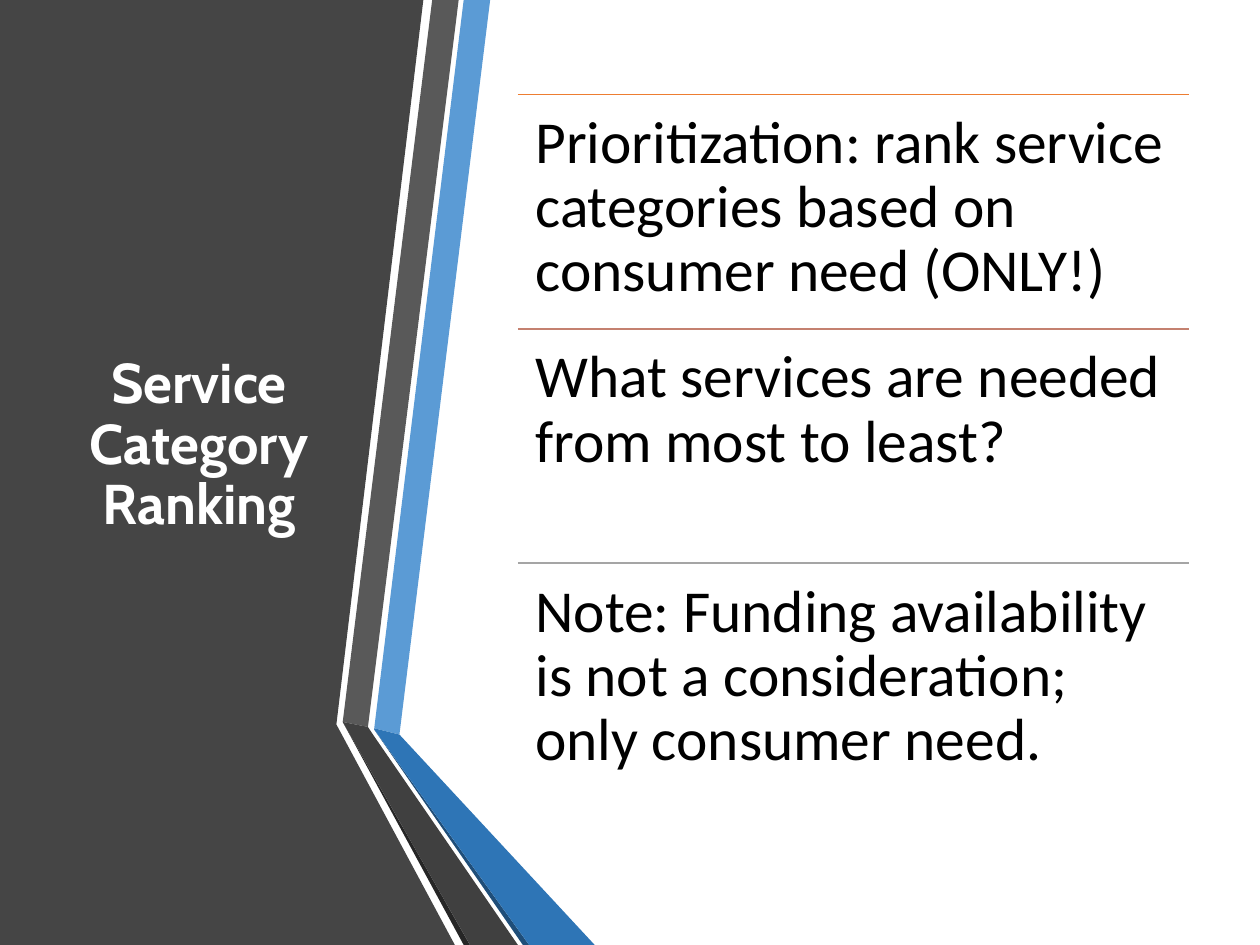
from lxml import etree
from pptx import Presentation
from pptx.dml.color import RGBColor
from pptx.enum import shapes, text
from pptx.oxml import ns
from pptx.util import Inches, Pt

WHITE = RGBColor(0xFF, 0xFF, 0xFF)
BLACK = RGBColor(0x00, 0x00, 0x00)
PANEL = RGBColor(0x45, 0x45, 0x45)
GRAY = RGBColor(0x59, 0x59, 0x59)
GRAY_DARK = RGBColor(0x40, 0x40, 0x40)
GRAY_EDGE = RGBColor(0x26, 0x26, 0x26)
BLUE = RGBColor(0x5B, 0x9B, 0xD5)
BLUE_DARK = RGBColor(0x2E, 0x75, 0xB6)
BLUE_EDGE = RGBColor(0x1F, 0x4E, 0x79)
ORANGE = RGBColor(0xED, 0x7D, 0x31)
ROSE = RGBColor(0xC4, 0x81, 0x70)
SILVER = RGBColor(0xA5, 0xA5, 0xA5)

PANEL_OUTLINE = [(0, 0), (3.36, 0), (2.67, 5.75), (3.61, 7.5), (0, 7.5)]
RIBBON = [
    (BLUE, [(2.97, 5.78), (3.17, 5.83), (3.89, 0), (3.68, 0)]),
    (GRAY, [(3.64, 0), (3.43, 0), (2.72, 5.73), (2.92, 5.77)]),
    (GRAY_EDGE, [(2.72, 5.73), (3.68, 7.5), (3.73, 7.5)]),
    (BLUE_EDGE, [(2.97, 5.79), (4.15, 7.5), (4.2, 7.5)]),
    (BLUE_DARK, [(2.97, 5.79), (4.2, 7.5), (4.72, 7.5), (3.17, 5.83), (2.97, 5.78)]),
    (GRAY_DARK, [(4.11, 7.5), (2.96, 5.83), (2.92, 5.77), (2.72, 5.73), (3.73, 7.5)]),
]
POINTS = [
    (ORANGE, "Prioritization: rank service categories based on consumer need (ONLY!)"),
    (ROSE, "What services are needed from most to least?"),
    (SILVER, "Note: Funding availability is not a consideration; only consumer need."),
]
LIST_LEFT, LIST_TOP, LIST_WIDTH, ROW_HEIGHT = 4.11, 0.75, 5.33, 1.86


def write_text(frame, words, *, font, size, color, bold=False,
               align=text.PP_ALIGN.LEFT, line_spacing=0.9):
    paragraph = frame.paragraphs[0]
    paragraph.alignment = align
    paragraph.line_spacing = line_spacing
    run = paragraph.add_run()
    run.text = words
    run.font.name = font
    run.font.size = Pt(size)
    run.font.bold = bold
    run.font.color.rgb = color


class SlideBuilder:
    """Holds the current slide and the style of its text and rules."""

    title_style = dict(font="Cabin", size=32, color=WHITE, bold=True,
                       align=text.PP_ALIGN.CENTER)
    body_style = dict(font="Calibri", size=34, color=BLACK)
    rule_width = Pt(1)

    def __init__(self, slide):
        self.slide = slide

    def polygon(self, points, color):
        start, *rest = [(Inches(x), Inches(y)) for x, y in points]
        builder = self.slide.shapes.build_freeform(*start)
        builder.add_line_segments(rest, close=True)
        shape = builder.convert_to_shape()
        shape.shadow.inherit = False
        shape.fill.solid()
        shape.fill.fore_color.rgb = color
        shape.line.fill.background()

    def rule(self, left, top, width, color):
        line = self.slide.shapes.add_connector(
            shapes.MSO_CONNECTOR.STRAIGHT,
            Inches(left), Inches(top), Inches(left + width), Inches(top))
        line.line.color.rgb = color
        line.line.width = self.rule_width
        etree.SubElement(line._element.spPr, ns.qn("a:effectLst"))

    def text_box(self, words, left, top, width, height, style, *,
                 anchor=text.MSO_ANCHOR.TOP, inset=(0.1, 0.05)):
        box = self.slide.shapes.add_textbox(
            Inches(left), Inches(top), Inches(width), Inches(height))
        frame = box.text_frame
        frame.word_wrap = True
        frame.vertical_anchor = anchor
        frame.margin_left = frame.margin_right = Inches(inset[0])
        frame.margin_top = frame.margin_bottom = Inches(inset[1])
        write_text(frame, words, **style)


def main():
    presentation = Presentation()
    presentation.slide_width = Inches(10)
    presentation.slide_height = Inches(7.5)
    builder = SlideBuilder(presentation.slides.add_slide(presentation.slide_layouts[6]))

    builder.polygon(PANEL_OUTLINE, PANEL)
    for color, points in RIBBON:
        builder.polygon(points, color)

    builder.text_box("Service Category Ranking", 0.44, 0.75, 2.28, 5.58,
                     builder.title_style, anchor=text.MSO_ANCHOR.MIDDLE)

    for row, (color, words) in enumerate(POINTS):
        top = LIST_TOP + row * ROW_HEIGHT
        builder.rule(LIST_LEFT, top, LIST_WIDTH, color)
        builder.text_box(words, LIST_LEFT, top, LIST_WIDTH, ROW_HEIGHT,
                         builder.body_style, inset=(0.14, 0.14))

    presentation.save("out.pptx")


if __name__ == "__main__":
    main()
